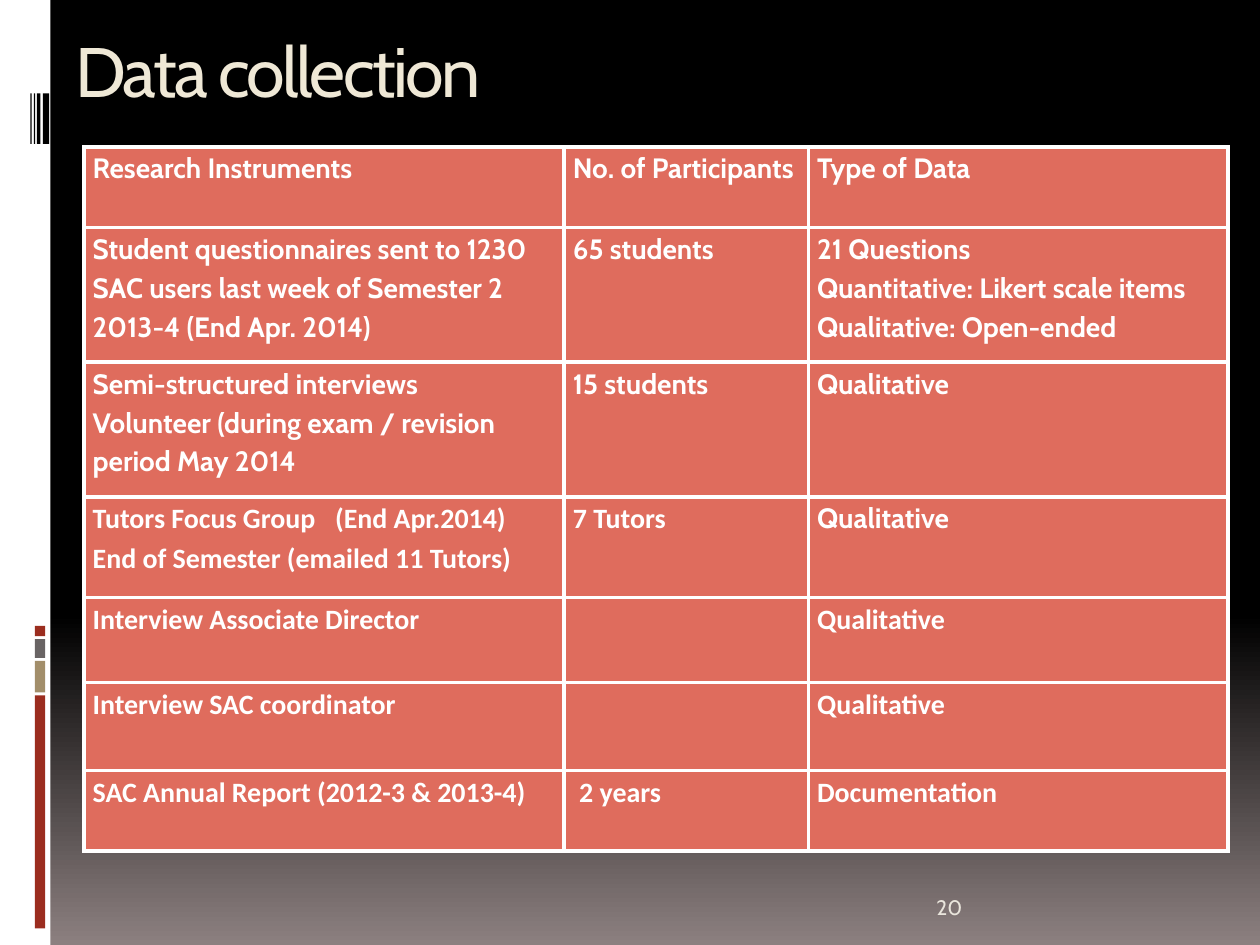
from typing import NamedTuple

from lxml.etree import SubElement
from pptx import Presentation
from pptx.dml.color import RGBColor
from pptx.enum.shapes import MSO_SHAPE as Preset
from pptx.enum.text import MSO_ANCHOR as Anchor, PP_ALIGN as Align
from pptx.oxml.ns import qn
from pptx.util import Pt

HEADING, BODY = "Cabin", "Calibri"
WHITE, BLACK, RED, GREY, TAN = "FFFFFF", "000000", "9B2D1F", "696464", "A28E6A"
CELL_FILL = "DF6C5D"
COLUMN_WIDTHS = (274.4, 139.6, 239.8)
DATE_TAB = 138.5


class Bar(NamedTuple):
    left: float
    top: float
    width: float
    height: float
    color: str


class Label(NamedTuple):
    left: float
    top: float
    width: float
    height: float
    text: str
    color: str
    size: float
    anchor: Anchor
    spacing: float = 0


class Row(NamedTuple):
    height: float
    texts: tuple[str, str, str]
    fonts: tuple[str, str, str] = (HEADING, HEADING, HEADING)


BARS = [
    Bar(0, 0, 28.8, 540, WHITE),
    *(Bar(20, top, 5.9, height, color) for top, height, color in (
        (397.4, 133.2, RED), (377.6, 18, TAN), (365.2, 10.8, GREY), (357.7, 5.8, RED))),
    *(Bar(left, 53.4, width, 28.8, BLACK) for left, width in (
        (24.5, 3.6), (21.1, 2.1), (19.4, 0.7), (17.4, 0.7))),
]

LABELS = [
    Label(36, 12, 648, 90, "Data collection", "EFE8D6", 40, Anchor.TOP, -1.5),
    Label(528, 492, 168, 37.2, "20", "E9E5DC", 12, Anchor.BOTTOM),
]

ROWS = [
    Row(46, ("Research Instruments", "No. of Participants", "Type of Data")),
    Row(77, ("Student questionnaires sent to 1230 SAC users last week of "
             "Semester 2 2013-4 (End Apr. 2014)",
             "65 students",
             "21 Questions\nQuantitative: Likert scale items\nQualitative: Open-ended")),
    Row(77, ("Semi-structured interviews\n"
             "Volunteer (during exam / revision period May 2014",
             "15 students", "Qualitative")),
    Row(57.6, ("Tutors Focus Group\t(End Apr.2014)\nEnd of Semester (emailed 11 Tutors)",
               "7 Tutors", "Qualitative"), (BODY, BODY, HEADING)),
    Row(48.4, ("Interview Associate Director", "", "Qualitative"), (BODY,) * 3),
    Row(50.4, ("Interview SAC coordinator", "", "Qualitative"), (BODY,) * 3),
    Row(46, ("SAC Annual Report (2012-3 & 2013-4)", " 2 years", "Documentation"),
        (BODY,) * 3),
]


def rgb(color: str) -> RGBColor:
    return RGBColor.from_string(color)


def apply(target, values: dict) -> None:
    for name, value in values.items():
        setattr(target, name, value)


def add_span(para, text: str, font: str, size: float, color: str, bold=False):
    span = para.add_run()
    span.text = text
    apply(span.font, {"name": font, "size": Pt(size), "bold": bold})
    span.font.color.rgb = rgb(color)
    return span


def paint_background(page) -> None:
    fill = page.background.fill
    fill.gradient()
    fill.gradient_angle = 270
    for stop, (position, color) in zip(fill.gradient_stops, ((0.65, BLACK), (1, "8C8080"))):
        stop.position = position
        stop.color.rgb = rgb(color)


def draw_bar(page, bar: Bar) -> None:
    shape = page.shapes.add_shape(Preset.RECTANGLE, *map(Pt, bar[:4]))
    shape.shadow.inherit = False
    shape.fill.solid()
    shape.fill.fore_color.rgb = rgb(bar.color)
    shape.line.fill.background()


def draw_label(page, label: Label) -> None:
    box = page.shapes.add_textbox(*map(Pt, label[:4]))
    apply(box.text_frame, {"word_wrap": True, "vertical_anchor": label.anchor})
    span = add_span(box.text_frame.paragraphs[0], label.text, HEADING, label.size, label.color)
    if label.spacing:
        span.font._element.set("spc", str(int(label.spacing * 100)))


def add_borders(cell, color: str, width: float) -> None:
    properties = cell._tc.get_or_add_tcPr()
    for side in ("a:lnL", "a:lnR", "a:lnT", "a:lnB"):
        line = SubElement(properties, qn(side), w=str(Pt(width)))
        SubElement(SubElement(line, qn("a:solidFill")), qn("a:srgbClr"), val=color)


def add_tab_stop(para, position: float) -> None:
    tabs = SubElement(para._p.get_or_add_pPr(), qn("a:tabLst"))
    SubElement(tabs, qn("a:tab"), pos=str(Pt(position)), algn="l")


def fill_cell(cell, text: str, font: str, align: Align) -> None:
    add_borders(cell, WHITE, 2.25)
    cell.fill.solid()
    cell.fill.fore_color.rgb = rgb(CELL_FILL)
    apply(cell, {"margin_left": Pt(5), "margin_right": Pt(5),
                 "margin_top": 0, "margin_bottom": 0})
    if not text:
        return
    frame = cell.text_frame
    for index, line in enumerate(text.split("\n")):
        para = frame.add_paragraph() if index else frame.paragraphs[0]
        apply(para, {"alignment": align, "line_spacing": 1.15})
        if "\t" in line:
            add_tab_stop(para, DATE_TAB)
        add_span(para, line, font, 16, WHITE, bold=True)


def draw_table(page, rows: list[Row], left: float, top: float) -> None:
    width, height = sum(COLUMN_WIDTHS), sum(row.height for row in rows)
    table = page.shapes.add_table(
        len(rows), len(COLUMN_WIDTHS), *map(Pt, (left, top, width, height))).table
    apply(table, {"first_row": False, "horz_banding": False})
    for column, column_width in zip(table.columns, COLUMN_WIDTHS):
        column.width = Pt(column_width)
    for r, row in enumerate(rows):
        table.rows[r].height = Pt(row.height)
        for c, (text, font) in enumerate(zip(row.texts, row.fonts)):
            align = Align.JUSTIFY if r and c == 1 else Align.LEFT
            fill_cell(table.cell(r, c), text, font, align)


def main() -> None:
    deck = Presentation()
    apply(deck, {"slide_width": Pt(720), "slide_height": Pt(540)})
    page = deck.slides.add_slide(deck.slide_layouts[6])
    paint_background(page)
    for bar in BARS:
        draw_bar(page, bar)
    draw_table(page, ROWS, 48, 84)
    for label in LABELS:
        draw_label(page, label)
    deck.save("out.pptx")


if __name__ == "__main__":
    main()
